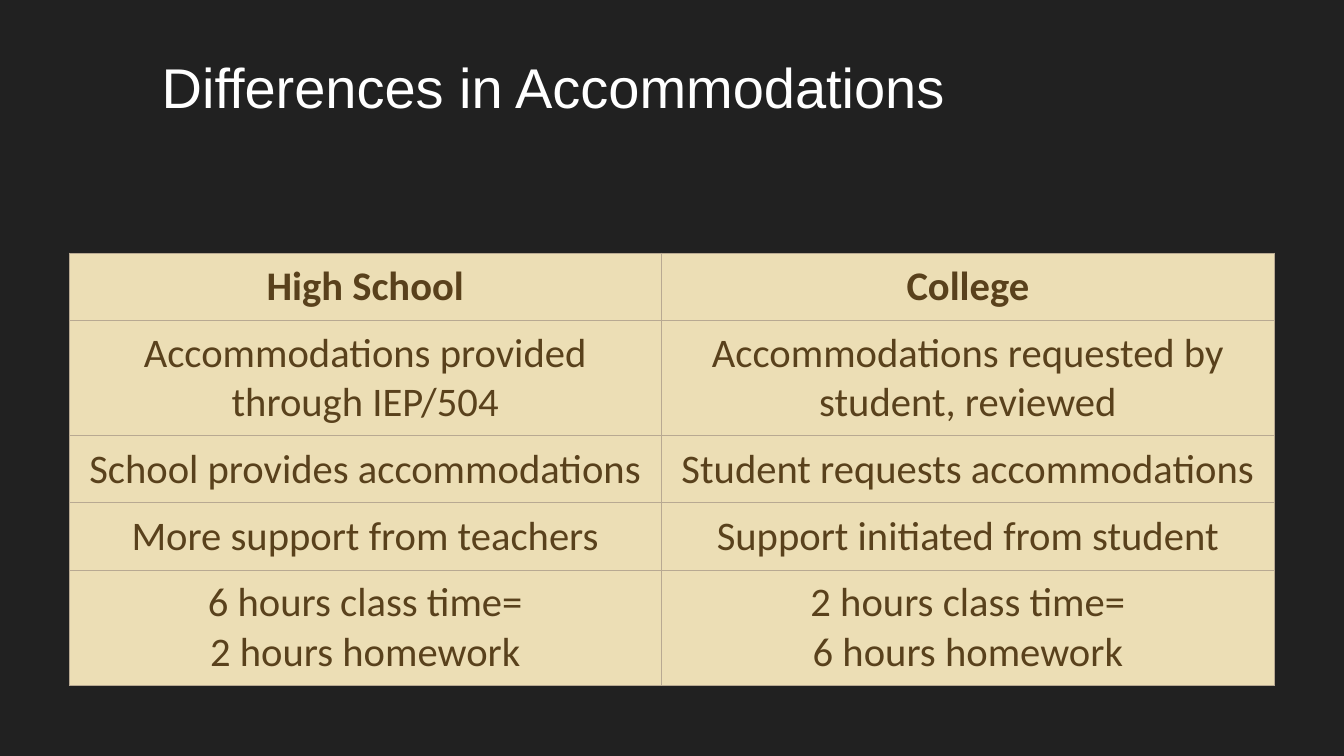
"""Builds a slide that compares accommodations in high school and in college."""
from dataclasses import dataclass

from lxml.etree import SubElement
from pptx import Presentation
from pptx.dml.color import RGBColor
from pptx.enum.text import MSO_ANCHOR, MSO_AUTO_SIZE, PP_ALIGN
from pptx.oxml.ns import qn
from pptx.util import Emu, Pt

EMU_PER_PX = 9525
COLORS = {
    "background": "212121",
    "title": "FFFFFF",
    "cell": "ECDEB5",
    "text": "59411C",
    "border": "B8A992",
}
COLUMN_WIDTHS = (564, 584)


@dataclass(frozen=True)
class ComparisonRow:
    high_school: str
    college: str
    height: int = 64
    bold: bool = False


COMPARISON = (
    ComparisonRow("High School", "College", bold=True),
    ComparisonRow("Accommodations provided through IEP/504",
                  "Accommodations requested by student, reviewed", height=110),
    ComparisonRow("School provides accommodations", "Student requests accommodations"),
    ComparisonRow("More support from teachers", "Support initiated from student"),
    ComparisonRow("6 hours class time=\v2 hours homework",
                  "2 hours class time=\v6 hours homework", height=110),
)


def px(length: int) -> Emu:
    return Emu(length * EMU_PER_PX)


def color(name: str) -> RGBColor:
    return RGBColor.from_string(COLORS[name])


def set_margins(owner, margin: int) -> None:
    owner.margin_left = owner.margin_right = px(margin)
    owner.margin_top = owner.margin_bottom = px(margin)


def style_font(font, face: str, size: int, color_name: str, bold: bool = False) -> None:
    font.name = face
    font.size = Pt(size)
    font.bold = bold
    font.color.rgb = color(color_name)


def add_borders(cell) -> None:
    properties = cell._tc.get_or_add_tcPr()
    for position, side in enumerate(("lnL", "lnR", "lnT", "lnB")):
        border = SubElement(properties, qn(f"a:{side}"), w=str(Pt(0.75)))
        fill = SubElement(border, qn("a:solidFill"))
        SubElement(fill, qn("a:srgbClr"), val=COLORS["border"])
        properties.insert(position, border)


def fill_cell(cell, wording: str, bold: bool) -> None:
    cell.text = wording
    cell.vertical_anchor = MSO_ANCHOR.MIDDLE
    set_margins(cell, 6)
    cell.fill.solid()
    cell.fill.fore_color.rgb = color("cell")
    add_borders(cell)
    paragraph = cell.text_frame.paragraphs[0]
    paragraph.alignment = PP_ALIGN.CENTER
    style_font(paragraph.font, "Calibri", 29, "text", bold)


def format_title(title) -> None:
    title.left, title.top, title.width, title.height = map(px, (144, 36, 1054, 92))
    frame = title.text_frame
    frame.text = "Differences in Accommodations"
    frame.auto_size = MSO_AUTO_SIZE.NONE
    frame.vertical_anchor = MSO_ANCHOR.MIDDLE
    set_margins(frame, 10)
    paragraph = frame.paragraphs[0]
    paragraph.alignment = PP_ALIGN.LEFT
    style_font(paragraph.font, "Arial", 40, "title")


def add_comparison(slide) -> None:
    comparison = slide.shapes.add_table(
        len(COMPARISON), len(COLUMN_WIDTHS), px(66), px(241),
        px(sum(COLUMN_WIDTHS)), px(sum(row.height for row in COMPARISON)),
    ).table
    comparison.horz_banding = False
    for column, width in zip(comparison.columns, COLUMN_WIDTHS):
        column.width = px(width)
    for table_row, row in zip(comparison.rows, COMPARISON):
        table_row.height = px(row.height)
        for cell, wording in zip(table_row.cells, (row.high_school, row.college)):
            fill_cell(cell, wording, row.bold)


def main() -> None:
    presentation = Presentation()
    presentation.slide_width, presentation.slide_height = px(1280), px(720)
    slide = presentation.slides.add_slide(presentation.slide_layouts[5])
    slide.background.fill.solid()
    slide.background.fill.fore_color.rgb = color("background")
    format_title(slide.shapes.title)
    add_comparison(slide)
    presentation.save("out.pptx")


if __name__ == "__main__":
    main()
